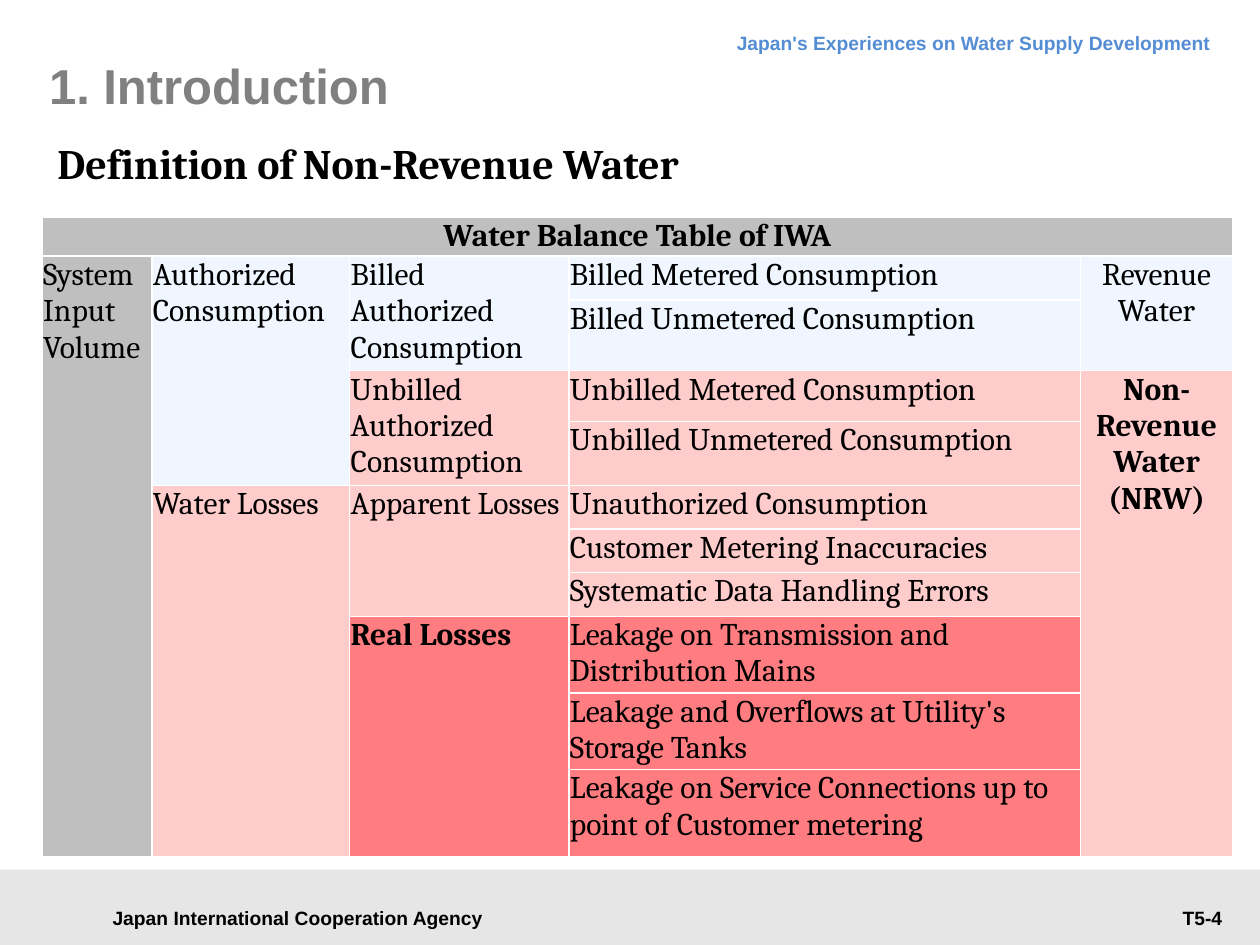
from dataclasses import dataclass
from itertools import product

from lxml.etree import SubElement
from pptx import Presentation
from pptx.dml.color import RGBColor
from pptx.enum.shapes import MSO_SHAPE as Shape
from pptx.enum.text import MSO_ANCHOR as Anchor, PP_ALIGN as Align
from pptx.oxml.ns import qn
from pptx.util import Cm, Pt

COLOURS = {
    "black": "000000",
    "heading": "808080",
    "course": "548DD4",
    "footer": "E6E6E6",
    "system": "BFBFBF",
    "revenue": "EFF6FF",
    "non_revenue": "FFCCCC",
    "real_loss": "FF7C80",
    "border": "FFFFFF",
}
COLUMN_WIDTHS = [2.21, 3.99, 4.42, 10.31, 3.07]
ROW_HEIGHTS = [0.78, 0.88, 1.43, 1.02, 1.29, 0.88, 0.88, 0.88, 1.54, 1.54, 1.75]


@dataclass
class Label:
    text: str
    left: float
    top: float
    width: float
    height: float
    size: int = 11
    font: str = "Arial"
    colour: str = "black"
    align: Align = Align.LEFT
    anchor: Anchor = Anchor.TOP
    margins: tuple[float, float] = (0.25, 0.13)
    line_spacing: int | None = None


@dataclass
class Block:
    text: str
    row: int
    column: int
    colour: str
    rows: int = 1
    columns: int = 1
    align: Align = Align.LEFT
    bold: bool = False


LABELS = [
    Label("Japan International Cooperation Agency", 1.8, 18.08, 8.41, 0.86,
          align=Align.CENTER, anchor=Anchor.MIDDLE),
    Label("Japan's Experiences on Water Supply Development", 6.91, 0.33, 17.75, 0.97,
          colour="course", align=Align.RIGHT, line_spacing=18),
    Label("T5-4", 20.9, 18.14, 3.99, 0.74, align=Align.RIGHT),
    Label("1. Introduction", 0.99, 0.71, 22.86, 2.01, size=28, colour="heading",
          anchor=Anchor.MIDDLE, margins=(0, 0)),
    Label("Definition of Non-Revenue Water", 0.91, 2.64, 21.49, 1.27, size=24, font="Cambria"),
]

COMPONENTS = [
    ("Billed Metered Consumption", "revenue"),
    ("Billed Unmetered Consumption", "revenue"),
    ("Unbilled Metered Consumption", "non_revenue"),
    ("Unbilled Unmetered Consumption", "non_revenue"),
    ("Unauthorized Consumption", "non_revenue"),
    ("Customer Metering Inaccuracies", "non_revenue"),
    ("Systematic Data Handling Errors", "non_revenue"),
    ("Leakage on Transmission and Distribution Mains", "real_loss"),
    ("Leakage and Overflows at Utility's Storage Tanks", "real_loss"),
    ("Leakage on Service Connections up to point of Customer metering", "real_loss"),
]

BLOCKS = [
    Block("Water Balance Table of IWA", 0, 0, "system", columns=5, align=Align.CENTER, bold=True),
    Block("System Input Volume", 1, 0, "system", rows=10),
    Block("Authorized Consumption", 1, 1, "revenue", rows=4),
    Block("Water Losses", 5, 1, "non_revenue", rows=6),
    Block("Billed Authorized Consumption", 1, 2, "revenue", rows=2),
    Block("Unbilled Authorized Consumption", 3, 2, "non_revenue", rows=2),
    Block("Apparent Losses", 5, 2, "non_revenue", rows=3),
    Block("Real Losses", 8, 2, "real_loss", rows=3, bold=True),
    Block("Revenue Water", 1, 4, "revenue", rows=2, align=Align.CENTER),
    Block("Non-Revenue Water (NRW)", 3, 4, "non_revenue", rows=8, align=Align.CENTER, bold=True),
] + [Block(text, row, 3, colour) for row, (text, colour) in enumerate(COMPONENTS, start=1)]


def colour_of(name: str) -> RGBColor:
    return RGBColor.from_string(COLOURS[name])


def style_paragraph(para, font: str, size: int, colour: str, bold: bool, align: Align) -> None:
    para.alignment = align
    para.font.name = font
    para.font.size = Pt(size)
    para.font.bold = bold
    para.font.color.rgb = colour_of(colour)


def draw_footer(page) -> None:
    band = page.shapes.add_shape(Shape.RECTANGLE, 0, Cm(17.53), Cm(25.4), Cm(1.52))
    band.shadow.inherit = False
    band.fill.solid()
    band.fill.fore_color.rgb = colour_of("footer")
    band.line.fill.background()


def draw_label(page, label: Label) -> None:
    box = page.shapes.add_textbox(Cm(label.left), Cm(label.top), Cm(label.width), Cm(label.height))
    frame = box.text_frame
    frame.word_wrap = True
    frame.vertical_anchor = label.anchor
    side, end = label.margins
    frame.margin_left = frame.margin_right = Cm(side)
    frame.margin_top = frame.margin_bottom = Cm(end)
    para = frame.paragraphs[0]
    para.text = label.text
    style_paragraph(para, label.font, label.size, label.colour, True, label.align)
    if label.line_spacing:
        para.line_spacing = Pt(label.line_spacing)


def add_borders(cell) -> None:
    properties = cell._tc.get_or_add_tcPr()
    for index, side in enumerate(("lnL", "lnR", "lnT", "lnB")):
        border = SubElement(properties, qn(f"a:{side}"), w=str(Pt(1)))
        fill = SubElement(border, qn("a:solidFill"))
        SubElement(fill, qn("a:srgbClr"), val=COLOURS["border"])
        properties.insert(index, border)


def draw_block(table, block: Block) -> None:
    last_row = block.row + block.rows - 1
    last_column = block.column + block.columns - 1
    for row, column in product(range(block.row, last_row + 1), range(block.column, last_column + 1)):
        cell = table.cell(row, column)
        cell.fill.solid()
        cell.fill.fore_color.rgb = colour_of(block.colour)
        cell.margin_left = cell.margin_right = cell.margin_top = Cm(0.02)
        cell.margin_bottom = 0
        add_borders(cell)
        style_paragraph(cell.text_frame.paragraphs[0], "Cambria", 18, "black", block.bold, block.align)
    first = table.cell(block.row, block.column)
    if block.rows * block.columns > 1:
        first.merge(table.cell(last_row, last_column))
    para = first.text_frame.paragraphs[0]
    para.text = block.text
    style_paragraph(para, "Cambria", 18, "black", block.bold, block.align)


def draw_balance_table(page) -> None:
    table = page.shapes.add_table(
        len(ROW_HEIGHTS), len(COLUMN_WIDTHS), Cm(0.85), Cm(4.38),
        Cm(sum(COLUMN_WIDTHS)), Cm(sum(ROW_HEIGHTS)),
    ).table
    table.first_row = False
    table.horz_banding = False
    for column, width in zip(table.columns, COLUMN_WIDTHS):
        column.width = Cm(width)
    for row, height in zip(table.rows, ROW_HEIGHTS):
        row.height = Cm(height)
    for block in BLOCKS:
        draw_block(table, block)


def main() -> None:
    deck = Presentation()
    deck.slide_width = Cm(25.4)
    deck.slide_height = Cm(19.05)
    page = deck.slides.add_slide(deck.slide_layouts[6])
    draw_footer(page)
    for label in LABELS:
        draw_label(page, label)
    draw_balance_table(page)
    deck.save("out.pptx")


if __name__ == "__main__":
    main()
